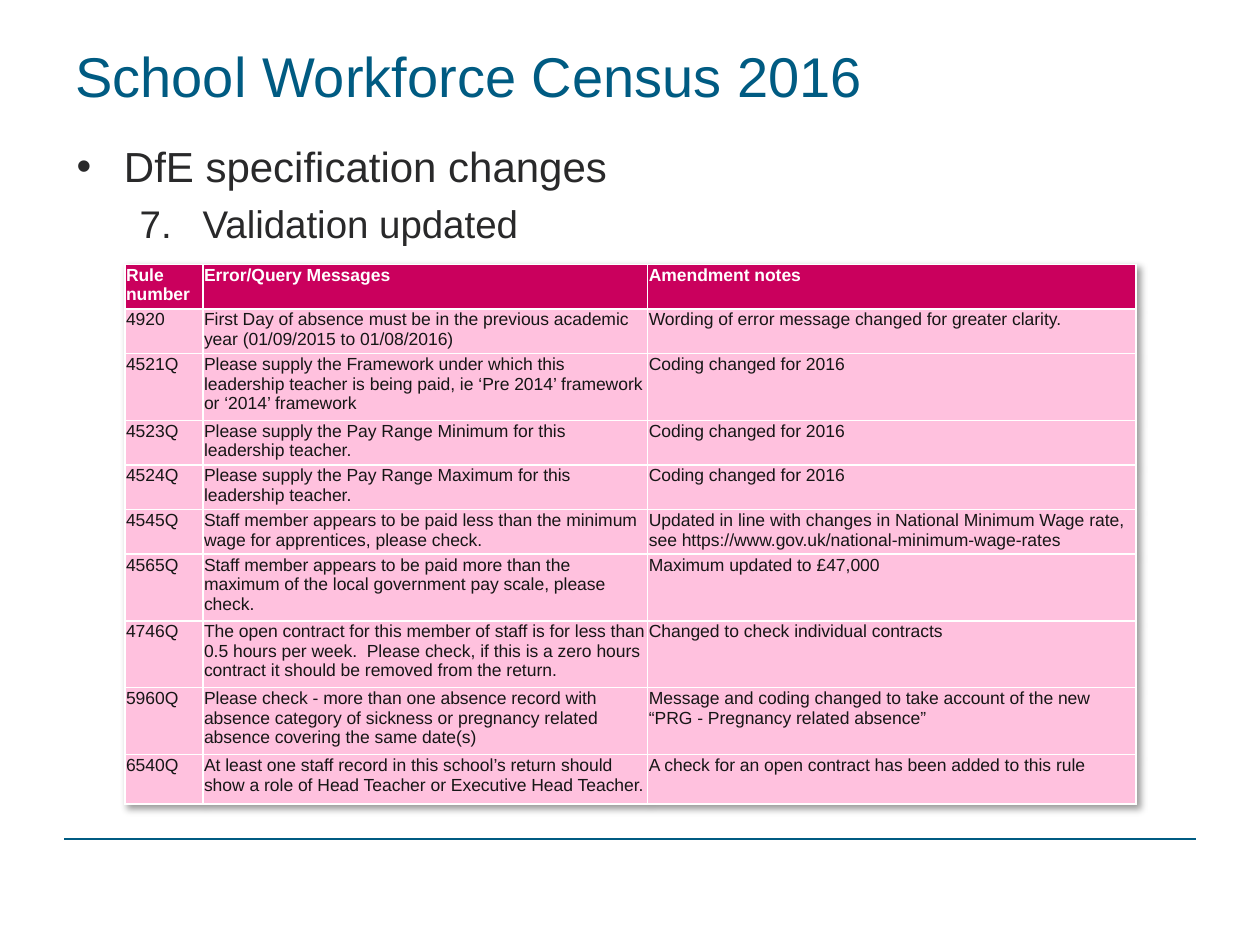
import pptx
import pptx.dml.color
import pptx.enum.shapes
import pptx.enum.text
import pptx.oxml
import pptx.oxml.ns
import pptx.util
from dataclasses import dataclass
from lxml import etree

Pt = pptx.util.Pt
ANCHOR = pptx.enum.text.MSO_ANCHOR
qn = pptx.oxml.ns.qn


@dataclass(frozen=True)
class Theme:
    font: str = "Arial"
    blue: str = "005B82"
    text: str = "29292A"
    cell_text: str = "161616"
    white: str = "FFFFFF"
    header_fill: str = "CA005D"
    row_fill: str = "FFC1DE"
    title_size: float = 32
    bullet_size: float = 24
    number_size: float = 22
    cell_size: float = 10


THEME = Theme()

TWO_LINES, THREE_LINES, LAST_ROW = 25.5, 38.2, 28.3
COLUMN_WIDTHS = (44.6, 254.2, 279)
# Each row: height, rule number, message, amendment
ROWS = (
    (TWO_LINES, "Rule number", "Error/Query Messages", "Amendment notes"),
    (TWO_LINES, "4920",
     "First Day of absence must be in the previous academic year (01/09/2015 to 01/08/2016)",
     "Wording of error message changed for greater clarity."),
    (THREE_LINES, "4521Q",
     "Please supply the Framework under which this leadership teacher is being paid, "
     "ie ‘Pre 2014’ framework or ‘2014’ framework",
     "Coding changed for 2016"),
    (TWO_LINES, "4523Q",
     "Please supply the Pay Range Minimum for this leadership teacher.",
     "Coding changed for 2016"),
    (TWO_LINES, "4524Q",
     "Please supply the Pay Range Maximum for this leadership teacher.",
     "Coding changed for 2016"),
    (TWO_LINES, "4545Q",
     "Staff member appears to be paid less than the minimum wage for apprentices, please check.",
     "Updated in line with changes in National Minimum Wage rate, "
     "see https://www.gov.uk/national-minimum-wage-rates"),
    (THREE_LINES, "4565Q",
     "Staff member appears to be paid more than the maximum of the local government "
     "pay scale, please check.",
     "Maximum updated to £47,000"),
    (THREE_LINES, "4746Q",
     "The open contract for this member of staff is for less than 0.5 hours per week.  "
     "Please check, if this is a zero hours contract it should be removed from the return.",
     "Changed to check individual contracts"),
    (THREE_LINES, "5960Q",
     "Please check - more than one absence record with absence category of sickness or "
     "pregnancy related absence covering the same date(s)",
     "Message and coding changed to take account of the new “PRG - Pregnancy related absence”"),
    (LAST_ROW, "6540Q",
     "At least one staff record in this school’s return should show a role of "
     "Head Teacher or Executive Head Teacher.",
     "A check for an open contract has been added to this rule"),
)


def rgb(value):
    return pptx.dml.color.RGBColor.from_string(value)


def add_xml(parent, tag, **attributes):
    return etree.SubElement(parent, qn(tag), attributes)


def write(para, text, *, size, color, bold=False, before=0, level=0,
          indent=0, hanging=0, bullet=None, number=None):
    """Write one paragraph with its list marker and format."""
    para.level = level
    properties = para._p.get_or_add_pPr()
    if indent:
        properties.set("marL", str(Pt(indent)))
        properties.set("indent", str(-Pt(hanging)))
    if before:
        para.space_before = Pt(before)
    if bullet:
        add_xml(properties, "a:buFont", typeface=THEME.font)
        add_xml(properties, "a:buChar", char=bullet)
    if number:
        add_xml(properties, "a:buFont", typeface=THEME.font)
        add_xml(properties, "a:buAutoNum", type="arabicPeriod", startAt=str(number))
    span = para.add_run()
    span.text = text
    span.font.name = THEME.font
    span.font.size = Pt(size)
    span.font.bold = bold
    span.font.color.rgb = rgb(color)


def add_box(page, left, top, width, height, anchor=ANCHOR.TOP):
    box = page.shapes.add_textbox(Pt(left), Pt(top), Pt(width), Pt(height))
    frame = box.text_frame
    frame.word_wrap = True
    frame.vertical_anchor = anchor
    return frame


def add_rule(page, left, right, height):
    rule = page.shapes.add_connector(
        pptx.enum.shapes.MSO_CONNECTOR.STRAIGHT, Pt(left), Pt(height), Pt(right), Pt(height))
    rule.line.color.rgb = rgb(THEME.blue)
    rule.line.width = Pt(0.75)
    add_xml(rule._element.spPr, "a:effectLst")


def fill_cell(cell, text, *, fill, color, bold):
    cell.margin_left = cell.margin_top = cell.margin_right = Pt(0.72)
    cell.margin_bottom = 0
    cell.vertical_anchor = ANCHOR.TOP
    write(cell.text_frame.paragraphs[0], text, size=THEME.cell_size, color=color, bold=bold)
    # Borders come before the fill in the cell properties
    properties = cell._tc.get_or_add_tcPr()
    for side in ("a:lnL", "a:lnR", "a:lnT", "a:lnB"):
        border = add_xml(properties, side, w=str(Pt(1)))
        add_xml(add_xml(border, "a:solidFill"), "a:srgbClr", val=THEME.white)
    cell.fill.solid()
    cell.fill.fore_color.rgb = rgb(fill)


def add_shadow(table):
    effects = add_xml(table._tbl.tblPr, "a:effectLst")
    table._tbl.tblPr.insert(0, effects)
    shadow = add_xml(effects, "a:outerShdw", blurRad=str(Pt(4)), dist=str(Pt(3)),
                     dir="2700000", algn="tl", rotWithShape="0")
    color = add_xml(shadow, "a:prstClr", val="black")
    add_xml(color, "a:alpha", val="40000")


def add_rules_table(page, left, top):
    heights = [row[0] for row in ROWS]
    table = page.shapes.add_table(
        len(ROWS), len(COLUMN_WIDTHS), Pt(left), Pt(top),
        Pt(sum(COLUMN_WIDTHS)), Pt(sum(heights))).table
    table.horz_banding = False
    add_shadow(table)
    for column, width in zip(table.columns, COLUMN_WIDTHS):
        column.width = Pt(width)
    for index, (height, *texts) in enumerate(ROWS):
        header = index == 0
        table.rows[index].height = Pt(height)
        for cell, text in zip(table.rows[index].cells, texts):
            fill_cell(cell, text, bold=header,
                      fill=THEME.header_fill if header else THEME.row_fill,
                      color=THEME.white if header else THEME.cell_text)


def main():
    deck = pptx.Presentation()
    deck.slide_width, deck.slide_height = Pt(720), Pt(540)
    page = deck.slides.add_slide(deck.slide_layouts[6])

    # Footer rule
    add_rule(page, 36.7, 683.3, 479.5)

    # Title
    title = add_box(page, 36, -2, 648, 90, ANCHOR.MIDDLE)
    write(title.paragraphs[0], "School Workforce Census 2016",
          size=THEME.title_size, color=THEME.blue)

    # Topic and numbered point
    body = add_box(page, 36.7, 77, 646.6, 79)
    write(body.paragraphs[0], "DfE specification changes", size=THEME.bullet_size,
          color=THEME.text, indent=27, hanging=27, bullet="•")
    write(body.add_paragraph(), "Validation updated", size=THEME.number_size,
          color=THEME.text, before=5, level=1, indent=72, hanging=36, number=7)

    # Validation rules
    add_rules_table(page, 71.3, 151)

    deck.save("out.pptx")


if __name__ == "__main__":
    main()
